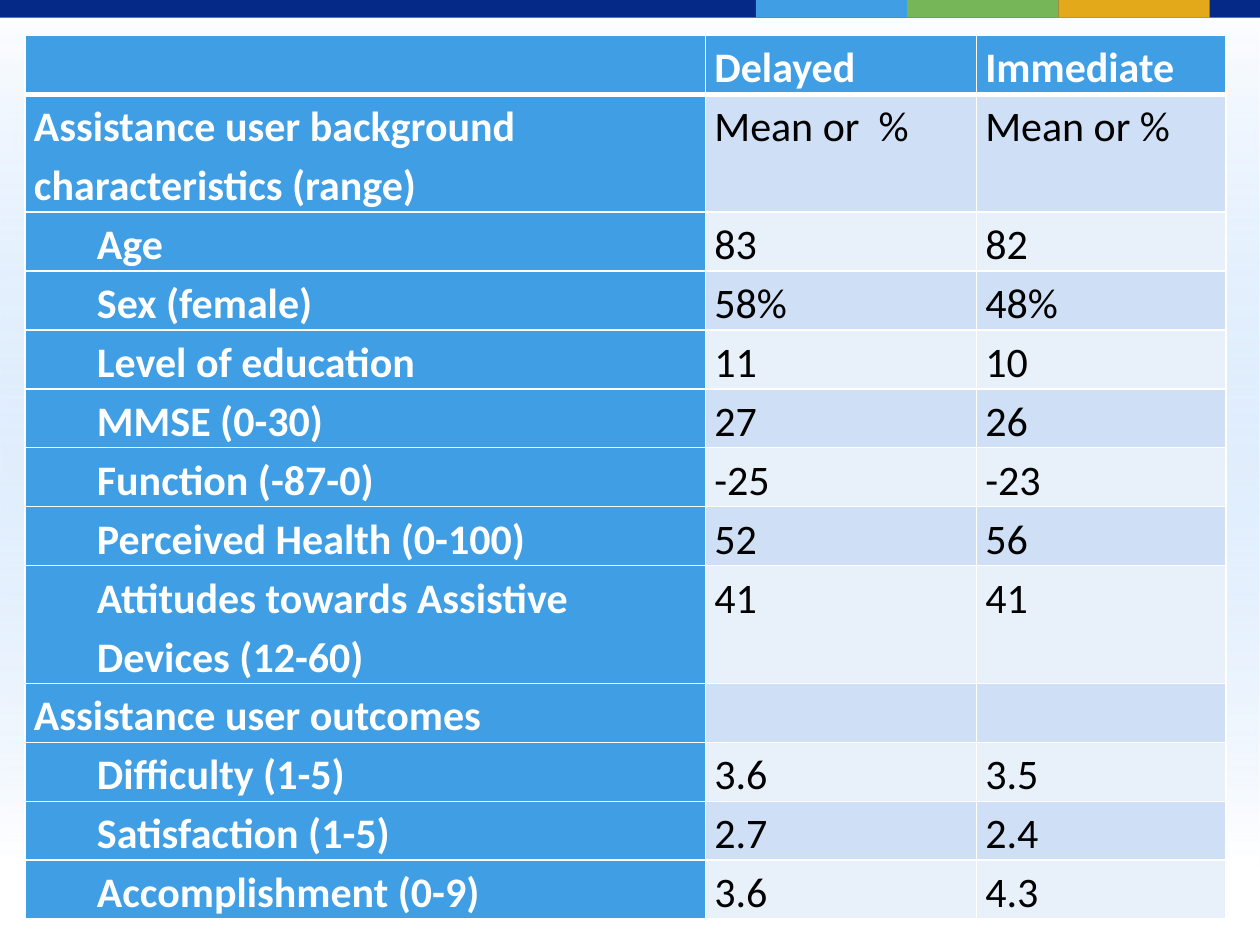
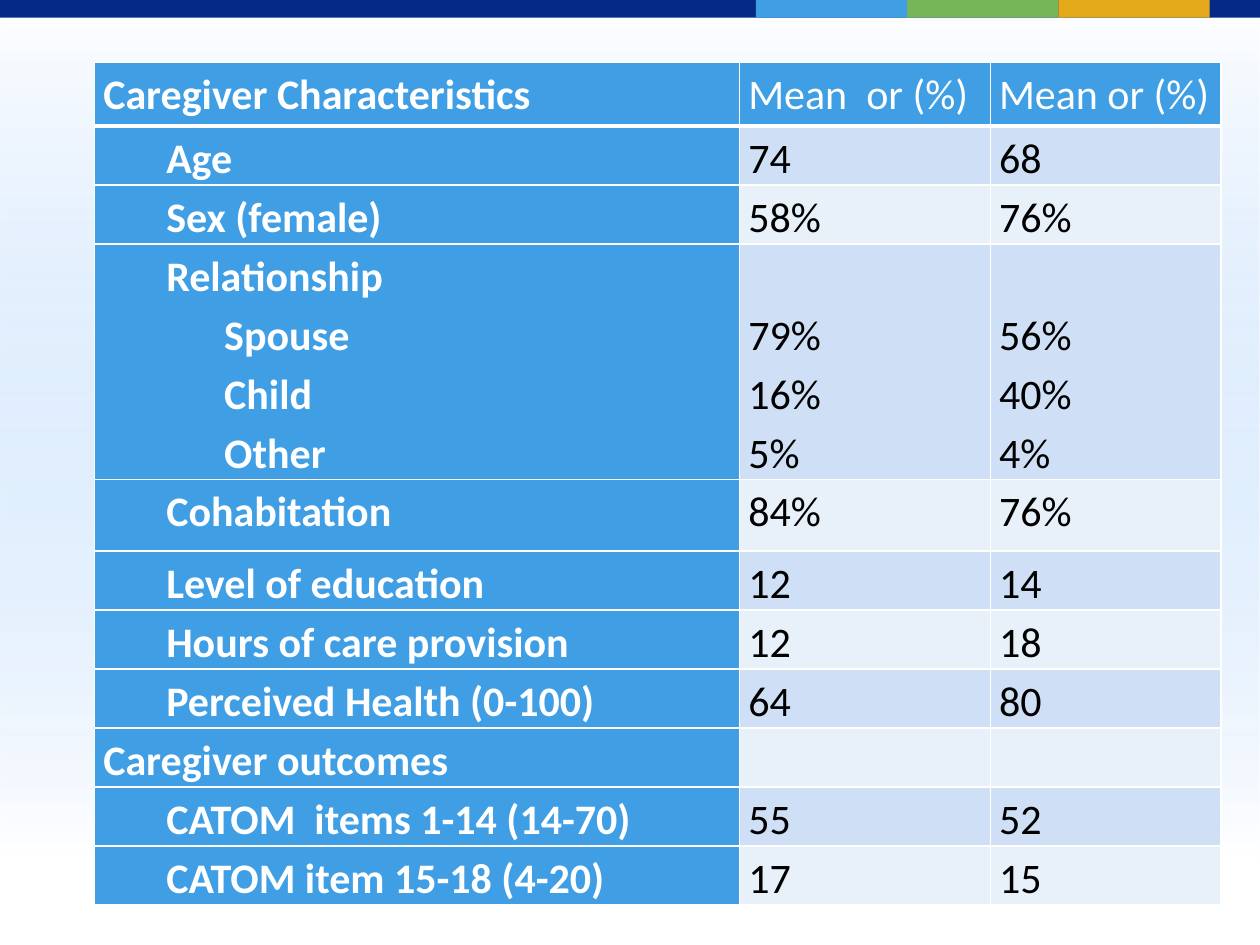
from lxml.etree import SubElement
from pptx import Presentation
from pptx.dml.color import RGBColor
from pptx.enum.shapes import MSO_SHAPE as SHAPE
from pptx.enum.text import MSO_ANCHOR as ANCHOR
from pptx.oxml.ns import qn
from pptx.util import Inches, Pt

FONT = "Calibri"
WHITE, BLACK = "FFFFFF", "000000"
NAVY, BLUE, GREEN, GOLD = "042986", "3F9EE4", "77B559", "E4A81B"
SKY = "7CB7F8"
BANDS = ("CFDFF5", "E8F0FA")
INDENTS = (0, 0.5, 0.96)

# Each row: indent level, label lines, delayed values, immediate values.
USER_ROWS = [
    (0, "", "Delayed", "Immediate"),
    (0, "Assistance user background characteristics (range)", "Mean or  %", "Mean or %"),
    (1, "Age", "83", "82"),
    (1, "Sex (female)", "58%", "48%"),
    (1, "Level of education", "11", "10"),
    (1, "MMSE (0-30)", "27", "26"),
    (1, "Function (-87-0)", "-25", "-23"),
    (1, "Perceived Health (0-100)", "52", "56"),
    (1, "Attitudes towards Assistive Devices (12-60)", "41", "41"),
    (0, "Assistance user outcomes", "", ""),
    (1, "Difficulty (1-5)", "3.6", "3.5"),
    (1, "Satisfaction (1-5)", "2.7", "2.4"),
    (1, "Accomplishment (0-9)", "3.6", "4.3"),
]
CAREGIVER_ROWS = [
    (0, "Caregiver Characteristics", "Mean  or (%)", "Mean or (%)"),
    (1, "Age", "74", "68"),
    (1, "Sex (female)", "58%", "76%"),
    (1, "Relationship\nSpouse\nChild\nOther", "79%\n16%\n5%", "56%\n40%\n4%"),
    (1, "Cohabitation", "84%", "76%"),
    (1, "Level of education", "12", "14"),
    (1, "Hours of care provision", "12", "18"),
    (1, "Perceived Health (0-100)", "64", "80"),
    (0, "Caregiver outcomes", "", ""),
    (1, "CATOM  items 1-14 (14-70)", "55", "52"),
    (1, "CATOM item 15-18 (4-20)", "17", "15"),
]


def color(hex_code):
    return RGBColor.from_string(hex_code)


def add_rect(page, left, top, width, height, fill=None):
    rect = page.shapes.add_shape(
        SHAPE.RECTANGLE, Inches(left), Inches(top), Inches(width), Inches(height))
    rect.shadow.inherit = False
    rect.line.fill.background()
    if fill:
        rect.fill.solid()
        rect.fill.fore_color.rgb = color(fill)
    return rect


def add_glow(page):
    """Add the backdrop that fades from clear sky blue up to white."""
    glow = add_rect(page, 0, 0, 10, 6.88)
    glow.fill.gradient()
    glow.fill.gradient_angle = 90
    stops = ((0.01, SKY, 0), (1, WHITE, 92))
    for stop, (position, hex_code, opacity) in zip(glow.fill.gradient_stops, stops):
        stop.position = position
        stop.color.rgb = color(hex_code)
    for node, (_, _, opacity) in zip(glow.element.iter(qn("a:srgbClr")), stops):
        SubElement(node, qn("a:alpha"), val=str(opacity * 1000))
    return glow


def decorate_layout(layout, page):
    """Draw the backdrop and top band once, then hand them to the layout."""
    decor = [add_glow(page), add_rect(page, 0, -0.02, 10, 0.16, NAVY)]
    for index, fill in enumerate((BLUE, GREEN, GOLD)):
        decor.append(add_rect(page, 6 + 1.2 * index, -0.02, 1.2, 0.16, fill))
    for shape in decor:
        layout.shapes.element.append(shape.element)


def set_borders(cell, widths):
    """Draw white borders; widths are points for left, right, top and bottom."""
    props = cell._tc.get_or_add_tcPr()
    for index, (side, width) in enumerate(zip("LRTB", widths)):
        line = props.makeelement(qn(f"a:ln{side}"), {"w": str(Pt(width))})
        fill = SubElement(line, qn("a:solidFill"))
        SubElement(fill, qn("a:srgbClr"), val=WHITE)
        props.insert(index, line)


def write_cell(cell, text, level, text_color, bold):
    """Write one paragraph a line; lines after the first go one level deeper."""
    frame = cell.text_frame
    for index, line in enumerate(text.split("\n") if text else []):
        para = frame.add_paragraph() if index else frame.paragraphs[0]
        para.line_spacing = 1.15
        indent = INDENTS[level + (1 if level and index else 0)]
        if indent:
            para._p.get_or_add_pPr().set("marL", str(Inches(indent)))
        run = para.add_run()
        run.text = line
        run.font.name = FONT
        run.font.size = Pt(24)
        run.font.bold = bold
        run.font.color.rgb = color(text_color)


def style_cell(cell, row, column):
    cell.margin_left = cell.margin_right = Inches(0.07)
    cell.margin_top = cell.margin_bottom = 0
    cell.fill.solid()
    is_head = row == 0 or column == 0
    cell.fill.fore_color.rgb = color(BLUE if is_head else BANDS[(row - 1) % 2])
    set_borders(cell, (1, 1, 3 if row == 1 else 1, 3 if row == 0 else 1))


def add_data_table(page, left, top, widths, rows, row_height, tall_rows, bold_head):
    """Add a table; tall_rows maps a row index to its own height."""
    heights = [tall_rows.get(index, row_height) for index in range(len(rows))]
    table = page.shapes.add_table(
        len(rows), len(widths), Inches(left), Inches(top),
        Inches(sum(widths)), Inches(sum(heights))).table
    table.first_col = True
    for column, width in zip(table.columns, widths):
        column.width = Inches(width)
    for table_row, height in zip(table.rows, heights):
        table_row.height = Inches(height)
    for row, (level, *texts) in enumerate(rows):
        for column, text in enumerate(texts):
            cell = table.cell(row, column)
            style_cell(cell, row, column)
            is_label = column == 0
            write_cell(cell, text, level if is_label else 0,
                       WHITE if is_label or row == 0 else BLACK,
                       is_label or (row == 0 and bold_head))
            if "\n" in text and not is_label:
                cell.vertical_anchor = ANCHOR.BOTTOM


def main():
    deck = Presentation()
    deck.slide_width, deck.slide_height = Inches(10), Inches(7.5)
    blank = deck.slide_layouts[6]
    user_page = deck.slides.add_slide(blank)
    caregiver_page = deck.slides.add_slide(blank)
    decorate_layout(blank, user_page)
    add_data_table(user_page, 0.2, 0.28, (5.4, 2.15, 1.98), USER_ROWS,
                   0.43, {1: 0.86, 8: 0.86}, bold_head=True)
    add_data_table(caregiver_page, 0.75, 0.49, (5.12, 1.99, 1.83), CAREGIVER_ROWS,
                   0.44, {0: 0.51, 3: 1.77, 4: 0.57}, bold_head=False)
    deck.save("out.pptx")


if __name__ == "__main__":
    main()
